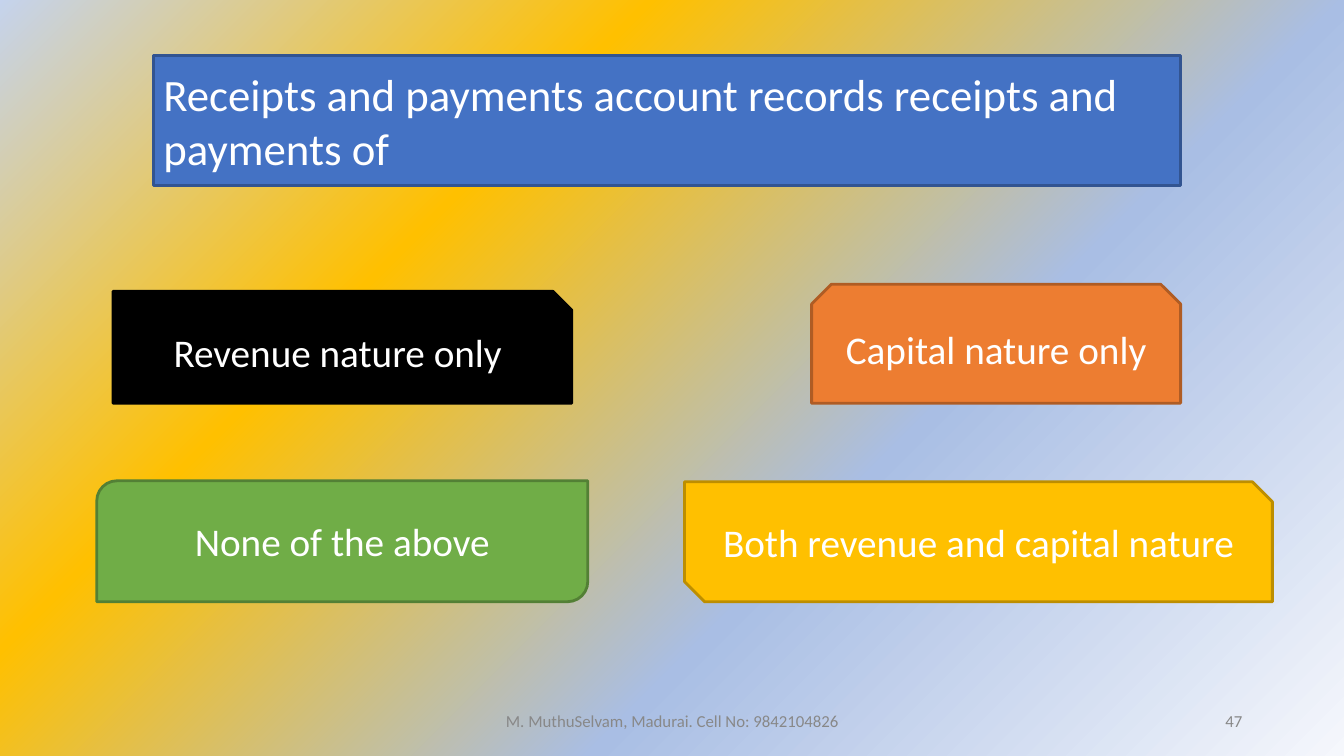
from lxml.etree import SubElement
from pptx import Presentation
from pptx.dml.color import RGBColor
from pptx.enum.shapes import MSO_SHAPE
from pptx.enum.text import MSO_ANCHOR, MSO_AUTO_SIZE, PP_ALIGN
from pptx.oxml.ns import qn
from pptx.util import Inches, Pt

WHITE = RGBColor(0xFF, 0xFF, 0xFF)
BLACK = RGBColor(0x00, 0x00, 0x00)
GREY = RGBColor(0x88, 0x88, 0x88)
BLUE = RGBColor(0x44, 0x72, 0xC4)
DARK_BLUE = RGBColor(0x32, 0x54, 0x91)
ORANGE = RGBColor(0xED, 0x7D, 0x31)
DARK_ORANGE = RGBColor(0xAF, 0x5C, 0x24)
GOLD = RGBColor(0xFF, 0xC0, 0x00)
DARK_GOLD = RGBColor(0xBD, 0x8E, 0x00)
GREEN = RGBColor(0x70, 0xAD, 0x47)
DARK_GREEN = RGBColor(0x53, 0x80, 0x35)
PALE_BLUE = RGBColor(0xC5, 0xD3, 0xED)
SOFT_BLUE = RGBColor(0xA9, 0xBE, 0xE4)
NEAR_WHITE = RGBColor(0xF5, 0xF7, 0xFC)

BACKGROUND_STOPS = [(0, PALE_BLUE), (31, GOLD), (64, SOFT_BLUE), (100, NEAR_WHITE)]

ANSWERS = [
    ("Revenue nature only", MSO_SHAPE.SNIP_1_RECTANGLE, (1.12, 2.89, 4.55, 1.11), BLACK, BLACK),
    ("Capital nature only", MSO_SHAPE.SNIP_2_SAME_RECTANGLE, (8.05, 2.82, 3.66, 1.18), ORANGE, DARK_ORANGE),
    ("Both revenue and capital nature", MSO_SHAPE.SNIP_2_DIAG_RECTANGLE, (6.79, 4.78, 5.83, 1.19), GOLD, DARK_GOLD),
    ("None of the above", MSO_SHAPE.ROUND_2_DIAG_RECTANGLE, (0.96, 4.77, 4.87, 1.2), GREEN, DARK_GREEN),
]


def write_text(shape, text, size=28, color=WHITE, align=PP_ALIGN.CENTER, font="Calibri"):
    frame = shape.text_frame
    frame.word_wrap = True
    frame.auto_size = MSO_AUTO_SIZE.NONE
    frame.vertical_anchor = MSO_ANCHOR.MIDDLE
    paragraph = frame.paragraphs[0]
    paragraph.alignment = align
    run = paragraph.add_run()
    run.text = text
    run.font.name = font
    run.font.size = Pt(size)
    run.font.color.rgb = color


class QuizSlide:
    """Holds the current slide and the look shared by its elements."""

    line_width = Pt(2)
    footer_top = 6.95
    footer_height = 0.4

    def __init__(self, presentation):
        self.slide = presentation.slides.add_slide(presentation.slide_layouts[5])

    def background(self, stops):
        fill = self.slide.background.fill
        fill.gradient()
        fill.gradient_angle = 315
        stop_list = next(self.slide.element.iter(qn("a:gsLst")))
        stop_list.clear()
        for percent, color in stops:
            stop = SubElement(stop_list, qn("a:gs"), pos=str(percent * 1000))
            SubElement(stop, qn("a:srgbClr"), val=str(color))

    def paint(self, shape, fill, line):
        shape.fill.solid()
        shape.fill.fore_color.rgb = fill
        shape.line.color.rgb = line
        shape.line.width = self.line_width

    def title(self, text, box, fill, line):
        """Turn the title placeholder into a scroll banner."""
        title = self.slide.shapes.title
        title.left, title.top, title.width, title.height = map(Inches, box)
        properties = title.element.spPr
        geometry = SubElement(properties, qn("a:prstGeom"), prst="horizontalScroll")
        SubElement(geometry, qn("a:avLst"))
        self.paint(title, fill, line)
        write_text(title, text, size=32, align=PP_ALIGN.LEFT)

    def answer(self, text, preset, box, fill, line):
        shape = self.slide.shapes.add_shape(preset, *map(Inches, box))
        shape.shadow.inherit = False
        self.paint(shape, fill, line)
        write_text(shape, text)

    def footer(self, text, left, width, align):
        box = (left, self.footer_top, width, self.footer_height)
        shape = self.slide.shapes.add_textbox(*map(Inches, box))
        write_text(shape, text, size=12, color=GREY, align=align)


def main():
    presentation = Presentation()
    presentation.slide_width = Inches(13.33)
    presentation.slide_height = Inches(7.5)
    quiz = QuizSlide(presentation)
    quiz.background(BACKGROUND_STOPS)
    quiz.title("Receipts and payments account records receipts and payments of",
               (1.52, 0.55, 10.19, 1.29), BLUE, DARK_BLUE)
    for answer in ANSWERS:
        quiz.answer(*answer)
    quiz.footer("M. MuthuSelvam, Madurai. Cell No: 9842104826", 4.42, 4.5, PP_ALIGN.CENTER)
    quiz.footer("47", 9.42, 3, PP_ALIGN.RIGHT)
    presentation.save("out.pptx")


if __name__ == "__main__":
    main()
